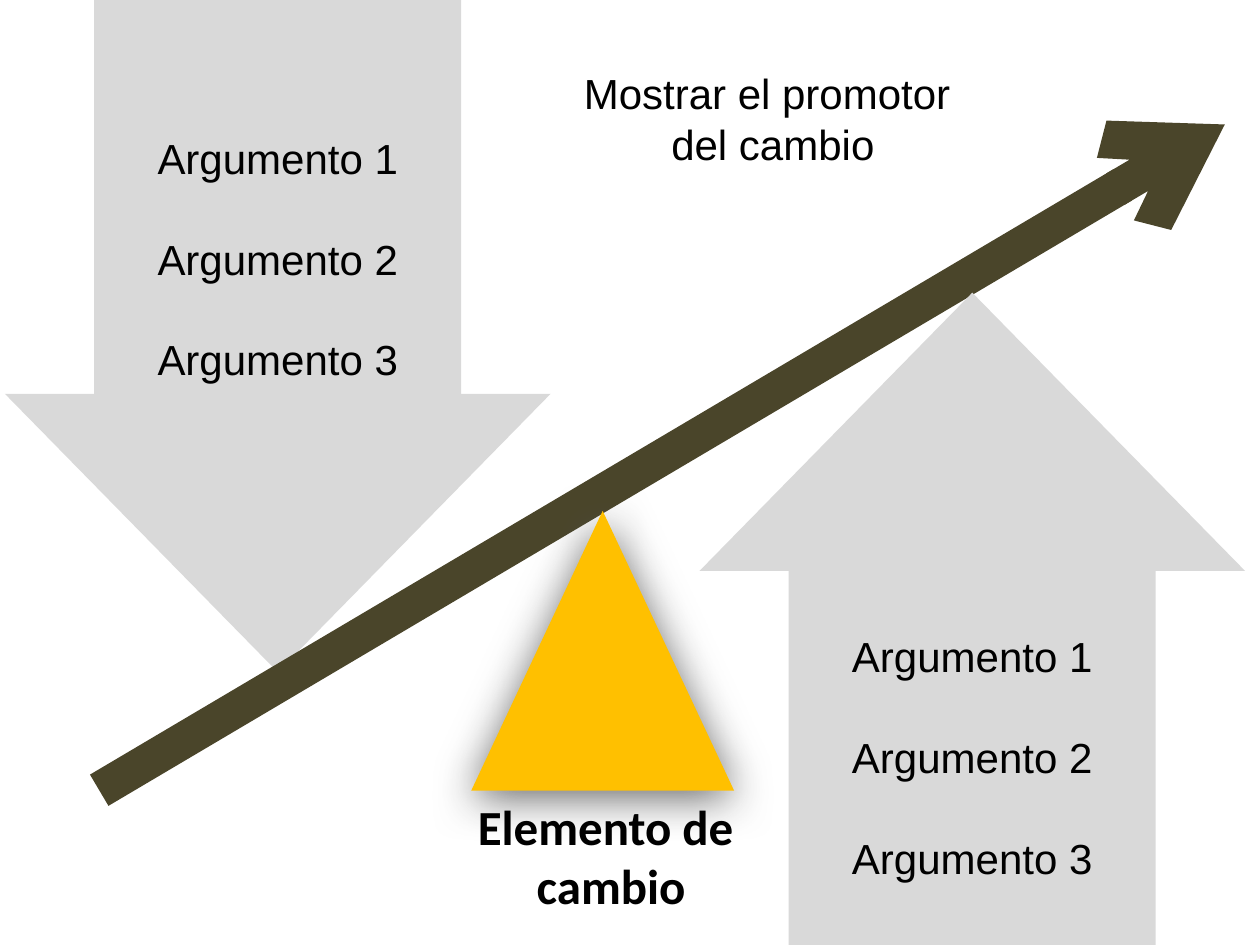
from lxml.etree import SubElement
from pptx import Presentation
from pptx.dml.color import RGBColor
from pptx.enum.shapes import MSO_CONNECTOR, MSO_SHAPE
from pptx.enum.text import MSO_ANCHOR, MSO_AUTO_SIZE, PP_ALIGN
from pptx.oxml.ns import qn
from pptx.util import Cm, Pt

GREY, BROWN, AMBER, BLACK, SHADOW = "D9D9D9", "4A452A", "FFC000", "000000", "595959"
ARGUMENTS = ["Argumento 1", "Argumento 2", "Argumento 3"]


def colour(hex_code):
    """Turn a hex string into a colour."""
    return RGBColor.from_string(hex_code)


def add_solid(slide, kind, box, fill):
    """Place a filled, unlined shape in a box given in centimetres."""
    solid = slide.shapes.add_shape(kind, *map(Cm, box))
    solid.shadow.inherit = False
    solid.fill.solid()
    solid.fill.fore_color.rgb = colour(fill)
    solid.line.fill.background()
    return solid


def write_lines(frame, lines, font, size, bold=False, spacing=None):
    """Write centred lines, one paragraph each."""
    frame.text = "\n".join(lines)
    for paragraph in frame.paragraphs:
        paragraph.alignment = PP_ALIGN.CENTER
        paragraph.line_spacing = spacing
        for run in paragraph.runs:
            run.font.name = font
            run.font.size = Pt(size)
            run.font.bold = bold
            run.font.color.rgb = colour(BLACK)


def add_force_arrow(slide, box):
    """Place the downward arrow head of an argument block."""
    arrow = add_solid(slide, MSO_SHAPE.DOWN_ARROW, box, GREY)
    arrow.adjustments[0] = 0.31
    arrow.adjustments[1] = 0.51
    return arrow


def add_arguments(slide, box):
    """Place the argument list on the shaft of an arrow."""
    shaft = add_solid(slide, MSO_SHAPE.RECTANGLE, box, GREY)
    shaft.text_frame.vertical_anchor = MSO_ANCHOR.MIDDLE
    write_lines(shaft.text_frame, ARGUMENTS, "Arial", 24, spacing=2.0)


def block_parts(box, points_up):
    """Split an argument block into its arrow and shaft boxes."""
    left, top, width, height = box
    arrow_height, shaft_width, shaft_height = 12.8, 7.4, 9.6
    arrow_top, shaft_top = top + height - arrow_height, top
    if points_up:
        arrow_top, shaft_top = top, top + height - shaft_height
    arrow_box = left, arrow_top, width, arrow_height
    shaft_box = left + (width - shaft_width) / 2, shaft_top, shaft_width, shaft_height
    return arrow_box, shaft_box


def add_lever(slide, box):
    """Draw the rising lever from the lower left to the upper right of its box."""
    left, top, width, height = box
    lever = slide.shapes.add_connector(
        MSO_CONNECTOR.STRAIGHT, Cm(left), Cm(top + height), Cm(left + width), Cm(top)
    )
    lever.line.color.rgb = colour(BROWN)
    lever.line.width = Pt(20.75)
    SubElement(lever.line._get_or_add_ln(), qn("a:tailEnd"), type="arrow")
    SubElement(lever._element.spPr, qn("a:effectLst"))


def add_pivot(slide, box):
    """Place the pivot triangle with its soft shadow."""
    pivot = add_solid(slide, MSO_SHAPE.ISOSCELES_TRIANGLE, box, AMBER)
    effects = pivot._element.spPr.find(qn("a:effectLst"))
    shadow = SubElement(
        effects, qn("a:outerShdw"), blurRad=str(Pt(25)), dist=str(Pt(4)),
        dir="5400000", algn="ctr", rotWithShape="0",
    )
    tint = SubElement(shadow, qn("a:srgbClr"), val=SHADOW)
    SubElement(tint, qn("a:alpha"), val="89000")


def add_caption(slide, box, lines, font, size, bold=False, wrap=True):
    """Place a free caption that grows with its text."""
    frame = slide.shapes.add_textbox(*map(Cm, box)).text_frame
    frame.word_wrap = wrap
    frame.auto_size = MSO_AUTO_SIZE.SHAPE_TO_FIT_TEXT
    write_lines(frame, lines, font, size, bold)


def build_lever_slide(slide):
    """Balance two argument blocks on a lever over the pivot."""
    push_arrow, push_shaft = block_parts((0.1, -0.1, 11, 13.65), False)
    pull_arrow, pull_shaft = block_parts((14.1, 5.9, 11, 13.65), True)
    add_force_arrow(slide, push_arrow)
    add_lever(slide, (2, 2.51, 22.69, 13.42))
    add_pivot(slide, (9.5, 10.3, 5.3, 5.64))
    add_arguments(slide, push_shaft)
    add_force_arrow(slide, pull_arrow).rotation = 180
    add_arguments(slide, pull_shaft)
    add_caption(slide, (9.35, 15.93, 5.94, 2.64), ["Elemento de ", "cambio"],
                "Calibri", 28, bold=True, wrap=False)
    add_caption(slide, (11.07, 1.24, 9.02, 2.31), ["Mostrar el promotor ", "del cambio"],
                "Arial", 24)


def main():
    """Build and save the presentation."""
    deck = Presentation()
    deck.slide_width, deck.slide_height = Cm(25.4), Cm(19.05)
    build_lever_slide(deck.slides.add_slide(deck.slide_layouts[6]))
    deck.save("out.pptx")


if __name__ == "__main__":
    main()
